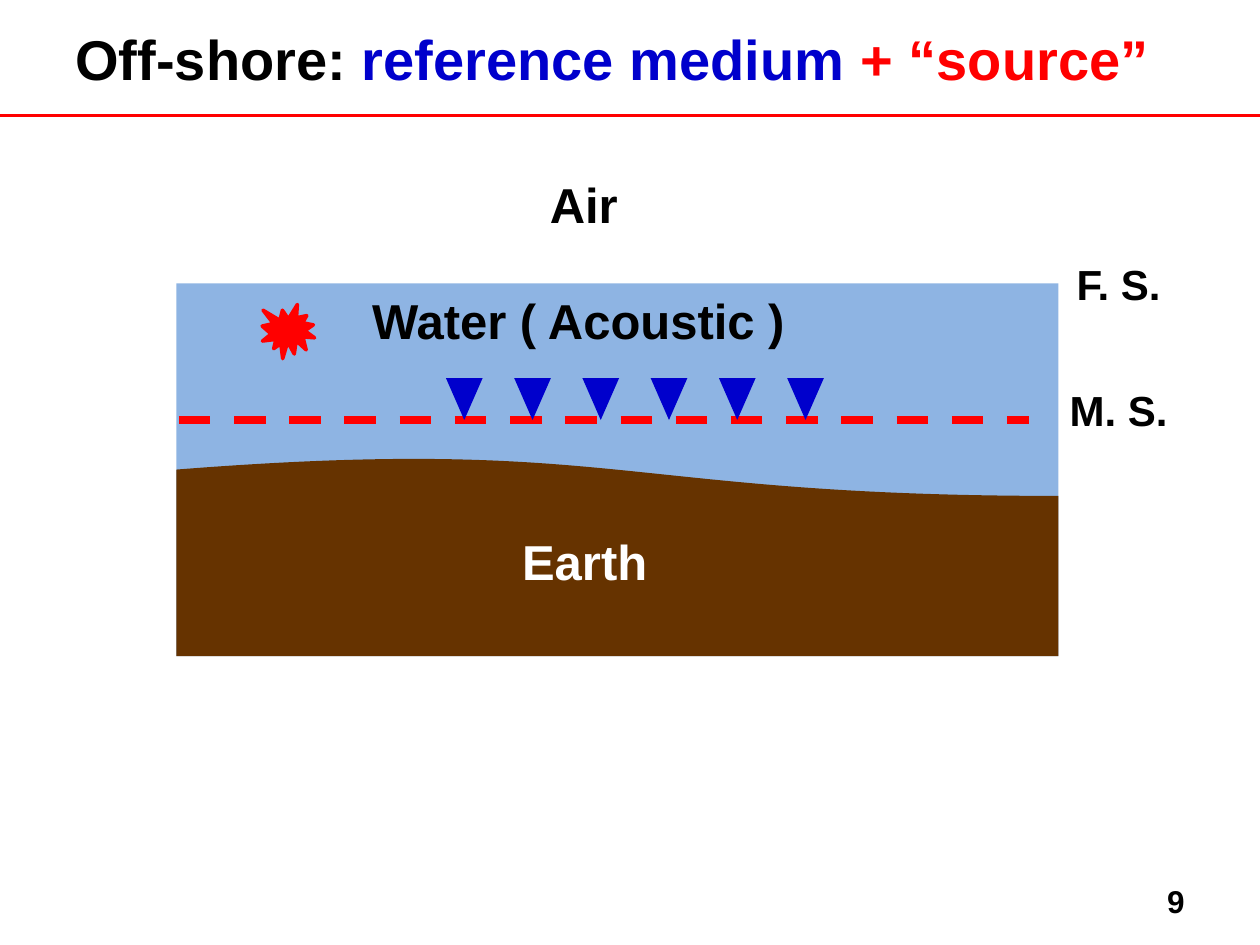
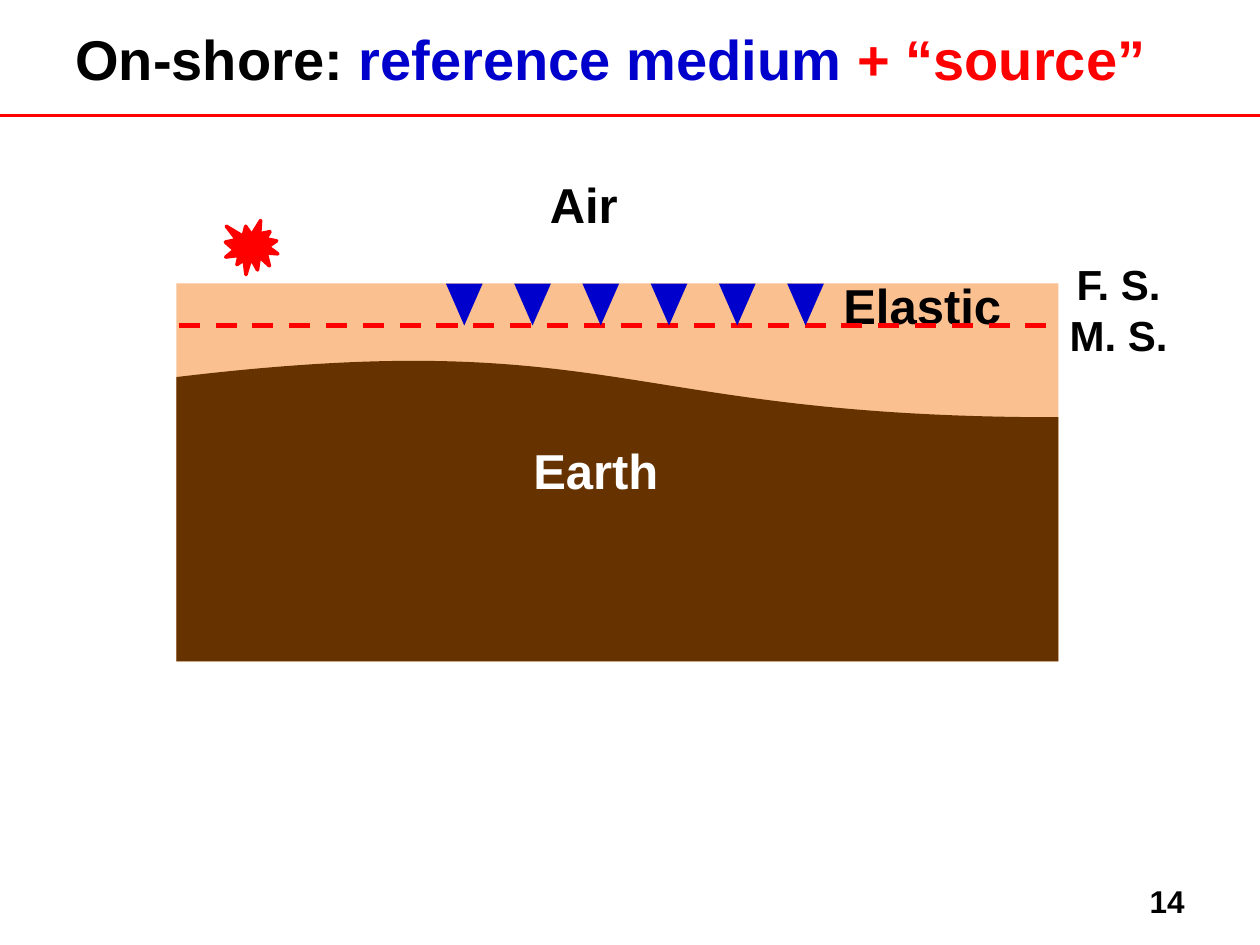
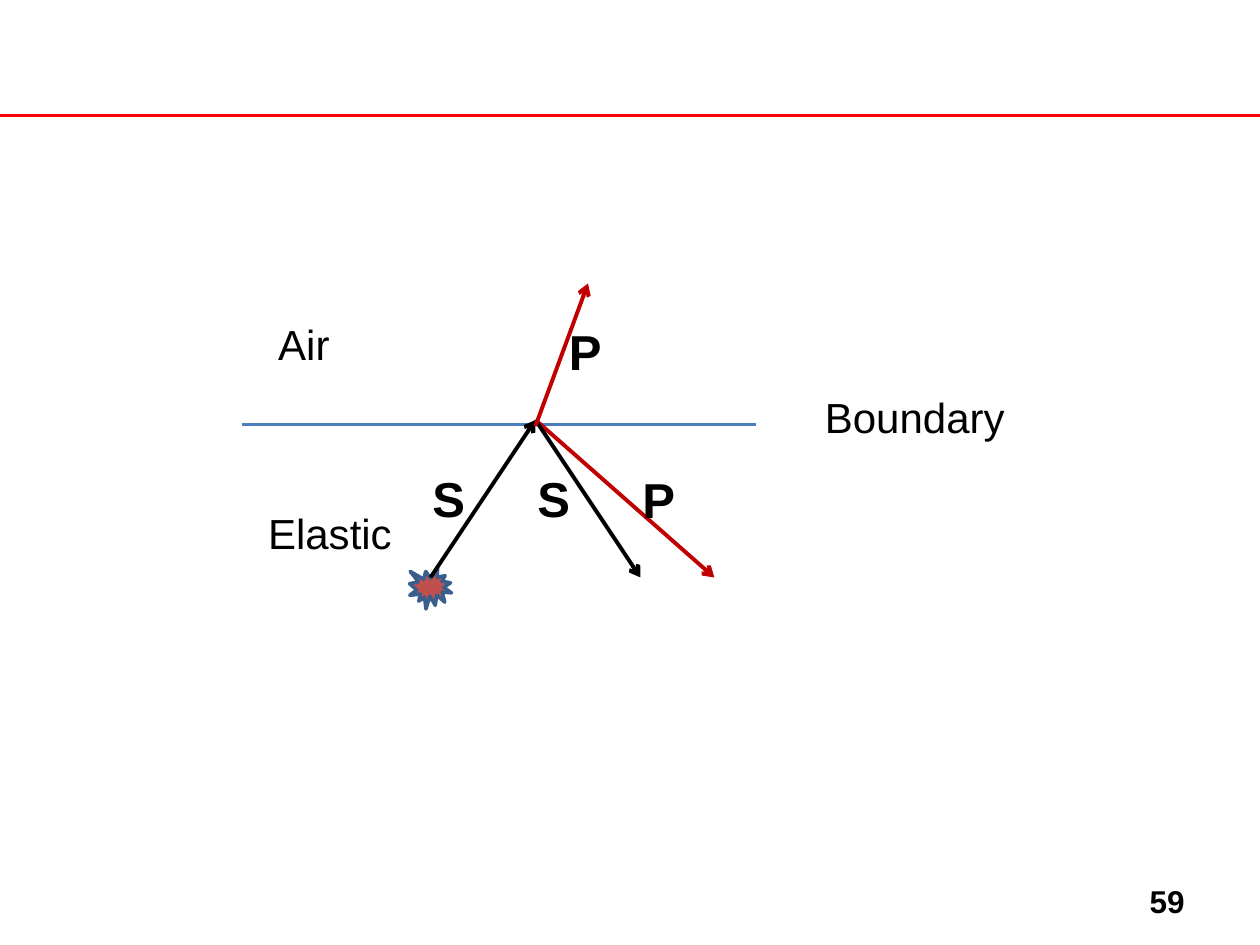
from lxml import etree
from pptx import Presentation
from pptx.dml.color import RGBColor
from pptx.enum.dml import MSO_LINE
from pptx.enum.shapes import MSO_CONNECTOR, MSO_SHAPE
from pptx.enum.text import MSO_ANCHOR, PP_ALIGN
from pptx.oxml.ns import qn
from pptx.util import Pt

RECT = MSO_SHAPE.RECTANGLE
WAVE = MSO_SHAPE.FLOWCHART_DOCUMENT
CONE = MSO_SHAPE.FLOWCHART_MERGE
BURST = MSO_SHAPE.EXPLOSION1
STRAIGHT = MSO_CONNECTOR.STRAIGHT
DASH = MSO_LINE.DASH
TOP, MIDDLE = MSO_ANCHOR.TOP, MSO_ANCHOR.MIDDLE
LEFT, CENTER, RIGHT = PP_ALIGN.LEFT, PP_ALIGN.CENTER, PP_ALIGN.RIGHT

FONT = "Arial"
BLACK, WHITE, RED, BLUE = "000000", "FFFFFF", "FF0000", "0000CC"
WATER, SAND, EARTH = "8EB4E3", "FAC090", "663300"
CRIMSON, BRICK, STEEL, NAVY = "C00000", "C0504D", "4B7EBC", "3A5F8C"

TITLE = {"size": Pt(32), "bold": True, "name": FONT}
LABEL = {"size": Pt(28), "bold": True, "name": FONT}
SIDE = {"size": Pt(24), "bold": True, "name": FONT}
PLAIN = {"size": Pt(24), "bold": False, "name": FONT}
PAGE = {"size": Pt(18), "bold": True, "name": FONT}


def paint(color, hue):
    color.rgb = RGBColor.from_string(hue)


def text(slide, box, runs, style, align=CENTER, anchor=TOP, inset=7.2):
    frame = slide.shapes.add_textbox(*map(Pt, box)).text_frame
    form = {"word_wrap": True, "vertical_anchor": anchor, "margin_left": Pt(inset)}
    for key, value in form.items():
        setattr(frame, key, value)
    para = frame.paragraphs[0]
    para.alignment = align
    for words, hue in runs:
        run = para.add_run()
        run.text = words
        for key, value in style.items():
            setattr(run.font, key, value)
        paint(run.font.color, hue)


def shape(slide, kind, box, fill, edge=None):
    item = slide.shapes.add_shape(kind, *map(Pt, box))
    item.shadow.inherit = False
    item.fill.solid()
    paint(item.fill.fore_color, fill)
    if edge:
        paint(item.line.color, edge)
        item.line.width = Pt(2)
    else:
        item.line.fill.background()
    return item


def line(slide, start, end, hue, width=2.25, dash=None, arrow=False):
    item = slide.shapes.add_connector(STRAIGHT, *map(Pt, (*start, *end)))
    paint(item.line.color, hue)
    item.line.width = Pt(width)
    if dash:
        item.line.dash_style = dash
    props = item.element.spPr
    if arrow:
        etree.SubElement(props.find(qn("a:ln")), qn("a:tailEnd"), type="arrow")
    etree.SubElement(props, qn("a:effectLst"))


def base(deck, page, place=None):
    slide = deck.slides.add_slide(deck.slide_layouts[6])
    line(slide, (0, 66), (720, 66), RED)
    if place:
        runs = [(place + ": ", BLACK), ("reference medium ", BLUE), ("+ “source”", RED)]
        text(slide, (36, 0, 648, 66), runs, TITLE, LEFT, MIDDLE)
    text(slide, (516, 500.4, 168, 28.8), [(page, BLACK)], PAGE, RIGHT, MIDDLE)
    return slide


def field(slide, box, layer, name, spot, ground, burst, soil, level, reach, weight, mark):
    x, y, w, h = box
    shape(slide, RECT, box, layer)
    text(slide, (x + spot[0], y + spot[1], spot[2], 41), [(name, BLACK)], LABEL)
    bed = shape(slide, WAVE, (x, y + ground, w, h - ground), EARTH)
    bed.element.spPr.find(qn("a:xfrm")).set("flipV", "1")
    shape(slide, BURST, (x + burst[0], y + burst[1], 30, 31), RED, RED)
    line(slide, (x + 1.4, y + level), (x + reach, y + level), RED, weight, DASH)
    for i in range(6):
        shape(slide, CONE, (x + 154 + 39 * i, y + level - 24, 21, 24), BLUE)
    for words, top in (("M. S.", mark), ("F. S.", -18)):
        text(slide, (x + 487.4, y + top, 102, 36), [(words, BLACK)], SIDE)
    for words, left, top, hue in ((" Air ", 157, -66, BLACK), (" Earth ", *soil, WHITE)):
        text(slide, (x + left, y + top, 152.6, 41), [(words, hue)], LABEL)


def rays(slide, x, y):
    def at(left, top):
        return x + left, y + top

    for words, left, top, wide in (
        ("Elastic", 0, 124.6, 108),
        ("Air", 5.8, 16.6, 108),
        ("Boundary", 318.2, 58.3, 138),
    ):
        text(slide, (*at(left, top), wide, 67.7), [(words, BLACK)], PLAIN, LEFT, inset=27.2)
    shape(slide, BURST, (*at(108, 162), 24, 24), BRICK, NAVY)
    line(slide, at(12.2, 80.6), at(306, 80.6), STEEL)
    hit = (180, 78)
    for start, end, hue in (
        (hit, (282.2, 168), CRIMSON),
        (hit, (240, 168), BLACK),
        ((120, 168), hit, BLACK),
        ((180, 81.4), (210, 0), CRIMSON),
    ):
        line(slide, at(*start), at(*end), hue, arrow=True)
    for words, left, top in (("S", 114, 102), ("P", 234, 103), ("S", 174, 102), ("P", 192, 18)):
        text(slide, (*at(left, top), 36, 41), [(words, BLACK)], LABEL, LEFT)


def main():
    deck = Presentation()
    deck.slide_width, deck.slide_height = Pt(720), Pt(540)
    field(
        base(deck, "9", "Off-shore"), (100.8, 162, 504, 213), WATER,
        name="Water ( Acoustic ) ", spot=(101.5, 0.7, 264.2), ground=98.8,
        burst=(49, 12), soil=(157, 138), level=78, reach=487.4, weight=4.5, mark=54,
    )
    field(
        base(deck, "14", "On-shore"), (100.8, 162, 504, 216), SAND,
        name=" Elastic", spot=(346, -8, 152.6), ground=42,
        burst=(28, -36), soil=(163.4, 86.4), level=24, reach=505.4, weight=3, mark=11.5,
    )
    rays(base(deck, "59"), 126, 162)
    deck.save("out.pptx")


if __name__ == "__main__":
    main()
